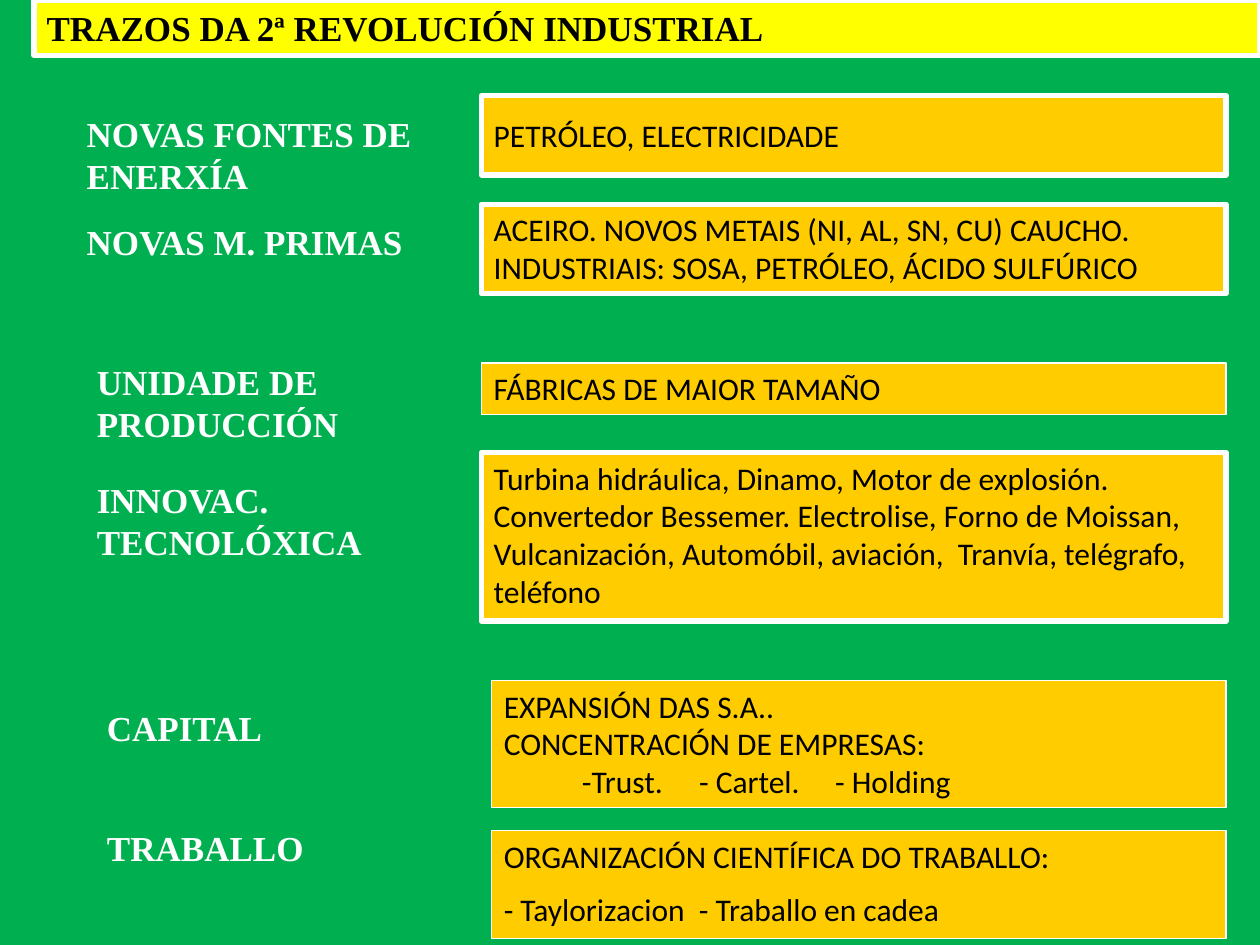
from dataclasses import dataclass

import pptx
import pptx.dml.color
import pptx.enum.shapes
import pptx.enum.text
import pptx.oxml.ns
import pptx.util
from lxml import etree
from pptx.util import Inches


def color(value):
    return pptx.dml.color.RGBColor.from_string(value)


@dataclass(frozen=True)
class Theme:
    background = color("00B050")
    banner = color("FFFF00")
    box = color("FFCC00")
    white = color("FFFFFF")
    black = color("000000")
    heading_font = "Times New Roman"
    body_font = "Calibri"
    heading_size = pptx.util.Pt(20)
    body_size = pptx.util.Pt(18)
    paragraph_gap = pptx.util.Pt(9)
    thick = pptx.util.Pt(3)
    thin = pptx.util.Pt(0.75)


THEME = Theme()
TOP = pptx.enum.text.MSO_ANCHOR.TOP
MIDDLE = pptx.enum.text.MSO_ANCHOR.MIDDLE
TITLE_BOX = (0.27, 0, 9.73, 0.44)
BOX_RIGHT = 9.73
TAB_STOPS = (0.62, 1.55, 2.63)

# Label, label box, detail lines, detail left, top, height, border, anchor, gap
ROWS = [
    ("NOVAS FONTES DE ENERXÍA", (0.59, 0.84, 2.84, 0.77),
     ["PETRÓLEO, ELECTRICIDADE"], 3.82, 0.76, 0.63, THEME.thick, MIDDLE, 0),
    ("NOVAS M. PRIMAS", (0.59, 1.7, 2.83, 0.43),
     ["ACEIRO. NOVOS METAIS (NI, AL, SN, CU) CAUCHO. "
      "INDUSTRIAIS: SOSA, PETRÓLEO, ÁCIDO SULFÚRICO"],
     3.82, 1.62, 0.71, THEME.thick, TOP, 0),
    ("UNIDADE DE PRODUCCIÓN", (0.67, 2.81, 2.52, 0.77),
     ["FÁBRICAS DE MAIOR TAMAÑO"], 3.82, 2.88, 0.41, THEME.thin, TOP, 0),
    ("INNOVAC. TECNOLÓXICA", (0.67, 3.75, 2.44, 0.77),
     ["Turbina hidráulica, Dinamo, Motor de explosión. Convertedor Bessemer. "
      "Electrolise, Forno de Moissan,  Vulcanización, Automóbil, aviación,  "
      "Tranvía, telégrafo, teléfono"],
     3.82, 3.59, 1.34, THEME.thick, TOP, 0),
    ("CAPITAL", (0.75, 5.56, 2.2, 0.43),
     ["EXPANSIÓN DAS S.A..", "CONCENTRACIÓN DE EMPRESAS:",
      "\t-Trust.\t- Cartel.\t- Holding"],
     3.9, 5.4, 1.01, THEME.thin, TOP, 0),
    ("TRABALLO", (0.75, 6.51, 2.28, 0.43),
     ["ORGANIZACIÓN CIENTÍFICA DO TRABALLO:",
      "- Taylorizacion  - Traballo en cadea"],
     3.9, 6.59, 0.86, THEME.thin, TOP, THEME.paragraph_gap),
]


def set_tab_stops(paragraph):
    properties = paragraph._p.get_or_add_pPr()
    tab_list = etree.SubElement(properties, pptx.oxml.ns.qn("a:tabLst"))
    for position in TAB_STOPS:
        etree.SubElement(tab_list, pptx.oxml.ns.qn("a:tab"),
                         pos=str(Inches(position)), algn="l")


def write_text(shape, lines, font_name, size, font_color, bold=False,
               anchor=TOP, gap=0):
    frame = shape.text_frame
    frame.word_wrap = True
    frame.auto_size = pptx.enum.text.MSO_AUTO_SIZE.NONE
    frame.vertical_anchor = anchor
    frame.text = "\n".join(lines)
    for index, paragraph in enumerate(frame.paragraphs):
        paragraph.alignment = pptx.enum.text.PP_ALIGN.LEFT
        paragraph.space_before = gap if index else pptx.util.Pt(0)
        paragraph.font.name = font_name
        paragraph.font.size = size
        paragraph.font.bold = bold
        paragraph.font.color.rgb = font_color
        if "\t" in lines[index]:
            set_tab_stops(paragraph)


def paint(shape, fill, border):
    shape.fill.solid()
    shape.fill.fore_color.rgb = fill
    shape.line.color.rgb = THEME.white
    shape.line.width = border


def place_title(slide, box, text):
    title = slide.shapes.title
    title.left, title.top, title.width, title.height = map(Inches, box)
    paint(title, THEME.banner, THEME.thick)
    write_text(title, [text], THEME.heading_font, THEME.heading_size,
               THEME.black, bold=True)


def add_label(slide, box, text):
    label = slide.shapes.add_textbox(*map(Inches, box))
    write_text(label, [text], THEME.heading_font, THEME.heading_size,
               THEME.white, bold=True)


def add_detail(slide, box, lines, border, anchor, gap):
    detail = slide.shapes.add_shape(
        pptx.enum.shapes.MSO_SHAPE.RECTANGLE, *map(Inches, box))
    detail.shadow.inherit = False
    paint(detail, THEME.box, border)
    write_text(detail, lines, THEME.body_font, THEME.body_size, THEME.black,
               anchor=anchor, gap=gap)


def main():
    presentation = pptx.Presentation()
    presentation.slide_width = Inches(10)
    presentation.slide_height = Inches(7.5)
    slide = presentation.slides.add_slide(presentation.slide_layouts[5])
    slide.background.fill.solid()
    slide.background.fill.fore_color.rgb = THEME.background

    place_title(slide, TITLE_BOX, "TRAZOS DA 2ª REVOLUCIÓN INDUSTRIAL")
    for label, label_box, lines, left, top, height, border, anchor, gap in ROWS:
        add_label(slide, label_box, label)
        add_detail(slide, (left, top, BOX_RIGHT - left, height), lines,
                   border, anchor, gap)

    presentation.save("out.pptx")


if __name__ == "__main__":
    main()
